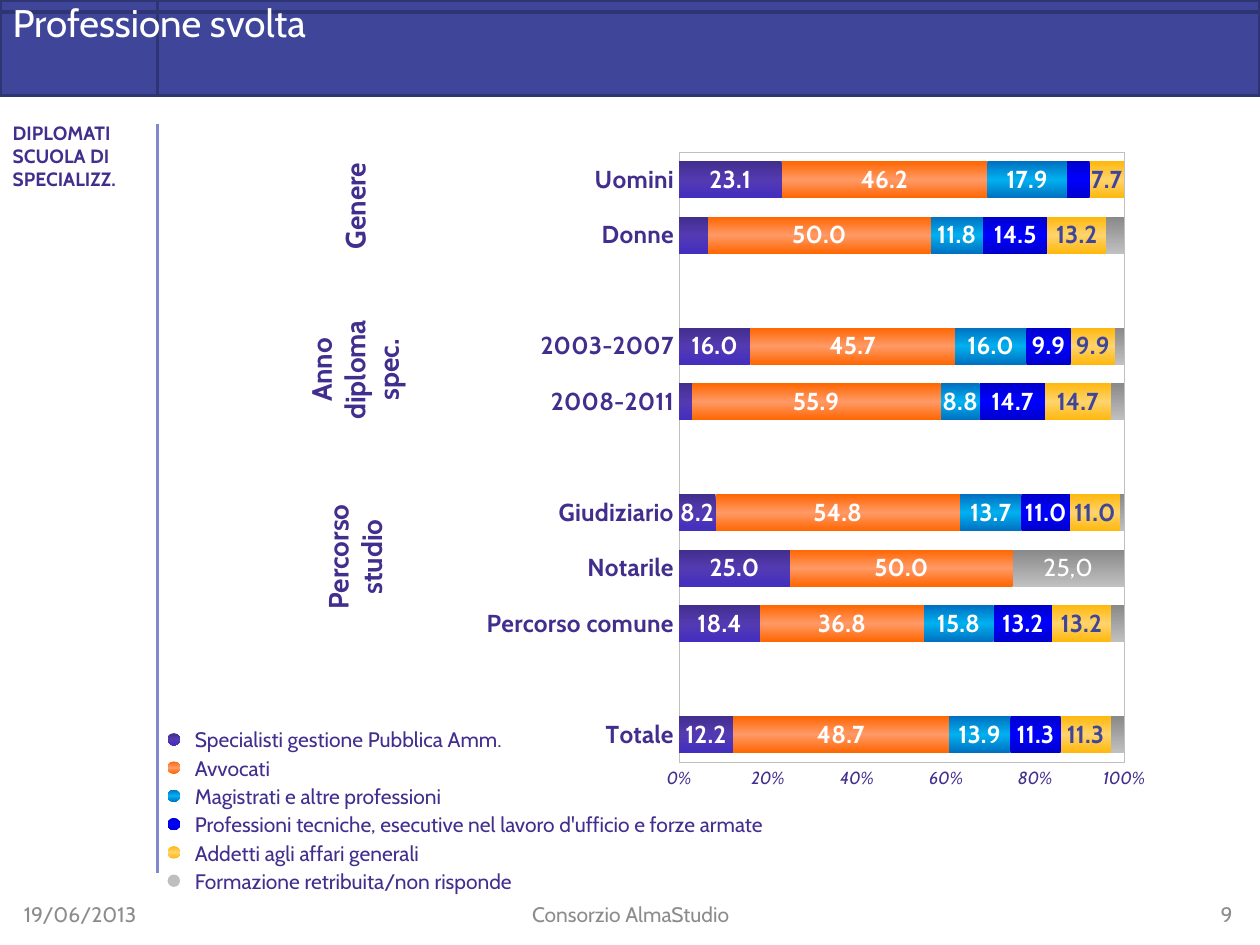
from dataclasses import dataclass
from typing import Any, Optional

import lxml.etree
import pptx
import pptx.chart.data
import pptx.dml.color
import pptx.enum.chart
import pptx.enum.shapes
import pptx.enum.text
import pptx.oxml
import pptx.oxml.ns
import pptx.util

Cm = pptx.util.Cm
Pt = pptx.util.Pt
qn = pptx.oxml.ns.qn
ALIGN = pptx.enum.text.PP_ALIGN
ANCHOR = pptx.enum.text.MSO_ANCHOR
SHAPE = pptx.enum.shapes.MSO_SHAPE
Stops = tuple[tuple[int, str], ...]


@dataclass(frozen=True)
class Theme:
    font: str = "Cabin"
    ink: str = "422E8D"
    header: str = "3F469A"
    header_edge: str = "2F3472"
    rule: str = "8288CC"
    frame: str = "C0C0C0"
    muted: str = "8C8C8C"
    white: str = "FFFFFF"
    grey_dot: str = "BFBFBF"
    title_size: float = 22
    group_size: float = 16
    chart_size: float = 14
    legend_size: float = 12
    side_size: float = 11
    scale_size: float = 10


THEME = Theme()


@dataclass(frozen=True)
class Profession:
    name: str
    shares: tuple[Optional[float], ...]
    stops: Stops
    width: float
    label_color: str = THEME.white
    number_format: str = "#,##0.0"
    unlabelled: tuple[int, ...] = ()
    only_label: Optional[tuple[int, str]] = None


@dataclass(frozen=True)
class Caption:
    text: str
    left: float
    top: float
    width: float
    height: float
    size: float
    color: str
    align: Any = ALIGN.LEFT
    bold: bool = False
    rotation: int = 0
    anchor: Any = ANCHOR.TOP


CATEGORIES = ("Totale", "", "Percorso comune", "Notarile", "Giudiziario", "",
              "2008-2011", "2003-2007", "", "Donne", "Uomini")

PROFESSIONS = (
    Profession("Specialisti gestione Pubblica Amm.",
               (12.2, None, 18.4, 25, 8.2, None, 2.9, 16, None, 6.6, 23.1),
               ((0, "422E8D"), (50, "543AB2"), (100, "422EBF")), 7.44,
               number_format="0.0", unlabelled=(6, 9)),
    Profession("Avvocati",
               (48.7, None, 36.8, 50, 54.8, None, 55.9, 45.7, None, 50, 46.2),
               ((0, "FF6600"), (50, "FF9966"), (100, "FF6600")), 6.1,
               number_format="0.0"),
    Profession("Magistrati e altre professioni",
               (13.9, None, 15.8, 0, 13.7, None, 8.8, 16, None, 11.8, 17.9),
               ((0, "0070C0"), (50, "00B0F0"), (100, "0070C0")), 6.63,
               unlabelled=(3,)),
    Profession("Professioni tecniche, esecutive nel lavoro d'ufficio e forze armate",
               (11.3, None, 13.2, 0, 11, None, 14.7, 9.9, None, 14.5, 5.1),
               ((0, "0000CC"), (50, "0000FF"), (100, "0000CC")), 13.03,
               unlabelled=(3, 10)),
    Profession("Addetti agli affari generali",
               (11.3, None, 13.2, 0, 11, None, 14.7, 9.9, None, 13.2, 7.7),
               ((0, "FFB70B"), (50, "FFD46D"), (100, "FFB70B")), 5.61,
               label_color=THEME.header, unlabelled=(3,)),
    Profession("Formazione retribuita/non risponde",
               (3, None, 3, 25, 1, None, 3, 2, None, 4, 0),
               ((0, "898989"), (100, "C0C0C0")), 7.42, only_label=(3, "25,0")),
)


def group_caption(text: str, top: float, height: float) -> Caption:
    return Caption(text, 5.72, top, 2.87, height, THEME.group_size, THEME.ink,
                   ALIGN.CENTER, True, 270)


def footer_caption(text: str, left: float, width: float, align: Any) -> Caption:
    return Caption(text, left, 17.91, width, 1.02, THEME.legend_size, THEME.muted,
                   align, anchor=ANCHOR.MIDDLE)


CAPTIONS = (
    group_caption("Percorso studio", 10.41, 1.63),
    group_caption("Anno diploma spec.", 6.3, 2.31),
    group_caption("Genere", 3.68, 0.94),
    footer_caption("19/06/2013", 0.23, 5.92, ALIGN.LEFT),
    footer_caption("9", 19.18, 5.92, ALIGN.RIGHT),
    footer_caption("Consorzio AlmaStudio", 8.69, 8.05, ALIGN.CENTER),
)


def rgb(code: str) -> Any:
    return pptx.dml.color.RGBColor.from_string(code)


def paint(fill: Any, color: str) -> None:
    fill.solid()
    fill.fore_color.rgb = rgb(color)


def shade(fill: Any, properties: Any, stops: Stops) -> None:
    fill.gradient()
    fill.gradient_angle = 270
    stop_list = properties.find(".//" + qn("a:gsLst"))
    for old_stop in list(stop_list):
        stop_list.remove(old_stop)
    for position, color in stops:
        stop = lxml.etree.SubElement(stop_list, qn("a:gs"), pos=str(position * 1000))
        lxml.etree.SubElement(stop, qn("a:srgbClr"), val=color)


def style_font(font: Any, size: float, color: str, bold: bool = False) -> None:
    font.name, font.size, font.bold = THEME.font, Pt(size), bold
    font.color.rgb = rgb(color)


def write(frame: Any, caption: Caption) -> Any:
    frame.word_wrap = True
    frame.auto_size = pptx.enum.text.MSO_AUTO_SIZE.NONE
    frame.vertical_anchor = caption.anchor
    paragraph = frame.paragraphs[0]
    paragraph.alignment = caption.align
    run = paragraph.add_run()
    run.text = caption.text
    style_font(run.font, caption.size, caption.color, caption.bold)
    return paragraph


def place(holder: Any, caption: Caption) -> Any:
    holder.left, holder.top = Cm(caption.left), Cm(caption.top)
    holder.width, holder.height = Cm(caption.width), Cm(caption.height)
    holder.rotation = caption.rotation
    return write(holder.text_frame, caption)


def add_caption(shapes: Any, caption: Caption) -> None:
    place(shapes.add_textbox(0, 0, 0, 0), caption)


def add_header(slide: Any) -> None:
    title = slide.shapes.title
    band = slide.shapes.add_shape(SHAPE.FLOWCHART_INTERNAL_STORAGE, 0, 0, Cm(25.4), Cm(1.93))
    band.shadow.inherit = False
    paint(band.fill, THEME.header)
    band.line.color.rgb = rgb(THEME.header_edge)
    band.line.width = Pt(2)
    title.element.addprevious(band.element)
    heading = place(title, Caption("Professione svolta", 0, 0, 25.4, 1.93,
                                   THEME.title_size, THEME.white))
    heading.line_spacing = Pt(THEME.title_size)


def add_side_note(slide: Any) -> None:
    rule = slide.shapes.add_connector(pptx.enum.shapes.MSO_CONNECTOR.STRAIGHT,
                                      Cm(3.18), Cm(2.51), Cm(3.18), Cm(17.6))
    rule.line.color.rgb = rgb(THEME.rule)
    rule.line.width = Pt(1.5)
    lxml.etree.SubElement(rule.element.spPr, qn("a:effectLst"))
    body = slide.placeholders[1]
    properties = body.text_frame.paragraphs[0]._p.get_or_add_pPr()
    properties.set("marL", "0")
    properties.set("indent", "0")
    lxml.etree.SubElement(properties, qn("a:buNone"))
    note = place(body, Caption("DIPLOMATI SCUOLA DI SPECIALIZZ.", 0, 2.31, 3.3, 0.99,
                               THEME.side_size, THEME.ink, bold=True))
    note.space_before = Pt(0)


def style_series(series: Any, profession: Profession) -> None:
    shade(series.format.fill, series._element.get_or_add_spPr(), profession.stops)
    labels = series.data_labels
    labels.show_value = profession.only_label is None
    if profession.only_label:
        index, text = profession.only_label
        run = series.points[index].data_label.text_frame.paragraphs[0].add_run()
        run.text = text
        style_font(run.font, THEME.chart_size, profession.label_color)
        return
    labels.number_format = profession.number_format
    labels.number_format_is_linked = False
    labels.position = pptx.enum.chart.XL_LABEL_POSITION.CENTER
    style_font(labels.font, THEME.chart_size, profession.label_color, True)
    for index in reversed(profession.unlabelled):
        labels._element.insert(0, pptx.oxml.parse_xml(
            f'<c:dLbl {pptx.oxml.ns.nsdecls("c")}><c:idx val="{index}"/>'
            '<c:delete val="1"/></c:dLbl>'))


def frame_plot(chart: Any) -> None:
    plot_area = chart.element.find(".//" + qn("c:plotArea"))
    for old_layout in plot_area.findall(qn("c:layout")):
        plot_area.remove(old_layout)
    edges = {"layoutTarget": "inner", "xMode": "edge", "yMode": "edge",
             "x": 0.427, "y": 0.005, "w": 0.484, "h": 0.937}
    settings = "".join(f'<c:{key} val="{value}"/>' for key, value in edges.items())
    plot_area.insert(0, pptx.oxml.parse_xml(
        f'<c:layout {pptx.oxml.ns.nsdecls("c")}><c:manualLayout>{settings}'
        '</c:manualLayout></c:layout>'))
    plot_area.append(pptx.oxml.parse_xml(
        f'<c:spPr {pptx.oxml.ns.nsdecls("c", "a")}><a:noFill/><a:ln w="5080"><a:solidFill>'
        f'<a:srgbClr val="{THEME.frame}"/></a:solidFill></a:ln></c:spPr>'))


def add_profession_chart(slide: Any) -> None:
    shares = pptx.chart.data.CategoryChartData()
    shares.categories = CATEGORIES
    for profession in PROFESSIONS:
        shares.add_series(profession.name, profession.shares)
    chart = slide.shapes.add_chart(pptx.enum.chart.XL_CHART_TYPE.BAR_STACKED_100, Cm(5.77),
                                   Cm(3), Cm(18.54), Cm(13.13), shares).chart
    chart.has_legend = chart.has_title = False
    style_font(chart.font, THEME.chart_size, THEME.ink, True)
    bars = chart.plots[0]
    bars.gap_width, bars.overlap, bars.vary_by_categories = 50, 100, False
    for axis, size, bold in ((chart.category_axis, THEME.chart_size, True),
                             (chart.value_axis, THEME.scale_size, False)):
        axis.has_major_gridlines = False
        axis.major_tick_mark = axis.minor_tick_mark = pptx.enum.chart.XL_TICK_MARK.NONE
        axis.format.line.color.rgb = rgb(THEME.frame)
        axis.format.line.width = Pt(0.4)
        style_font(axis.tick_labels.font, size, THEME.ink, bold)
    scale = chart.value_axis
    scale.major_unit = 0.2
    scale.tick_labels.font.italic = True
    scale.tick_labels.number_format = "0%"
    scale.tick_labels.number_format_is_linked = False
    for series, profession in zip(bars.series, PROFESSIONS):
        style_series(series, profession)
    frame_plot(chart)


def add_legend(slide: Any) -> None:
    legend = slide.shapes.add_group_shape().shapes
    for row, profession in enumerate(PROFESSIONS):
        top = 14.53 + 0.57 * row
        dot = legend.add_shape(SHAPE.FLOWCHART_CONNECTOR, Cm(3.38), Cm(top + 0.25),
                               Cm(0.25), Cm(0.25))
        dot.shadow.inherit = False
        dot.line.fill.background()
        if profession.only_label:
            paint(dot.fill, THEME.grey_dot)
        else:
            shade(dot.fill, dot.element.spPr, profession.stops)
        add_caption(legend, Caption(profession.name, 3.68, top, profession.width, 0.76,
                                    THEME.legend_size, THEME.ink))


def main() -> None:
    deck = pptx.Presentation()
    deck.slide_width, deck.slide_height = Cm(25.4), Cm(19.05)
    slide = deck.slides.add_slide(deck.slide_layouts[1])
    add_header(slide)
    add_side_note(slide)
    add_profession_chart(slide)
    add_legend(slide)
    for caption in CAPTIONS:
        add_caption(slide.shapes, caption)
    deck.save("out.pptx")


if __name__ == "__main__":
    main()
